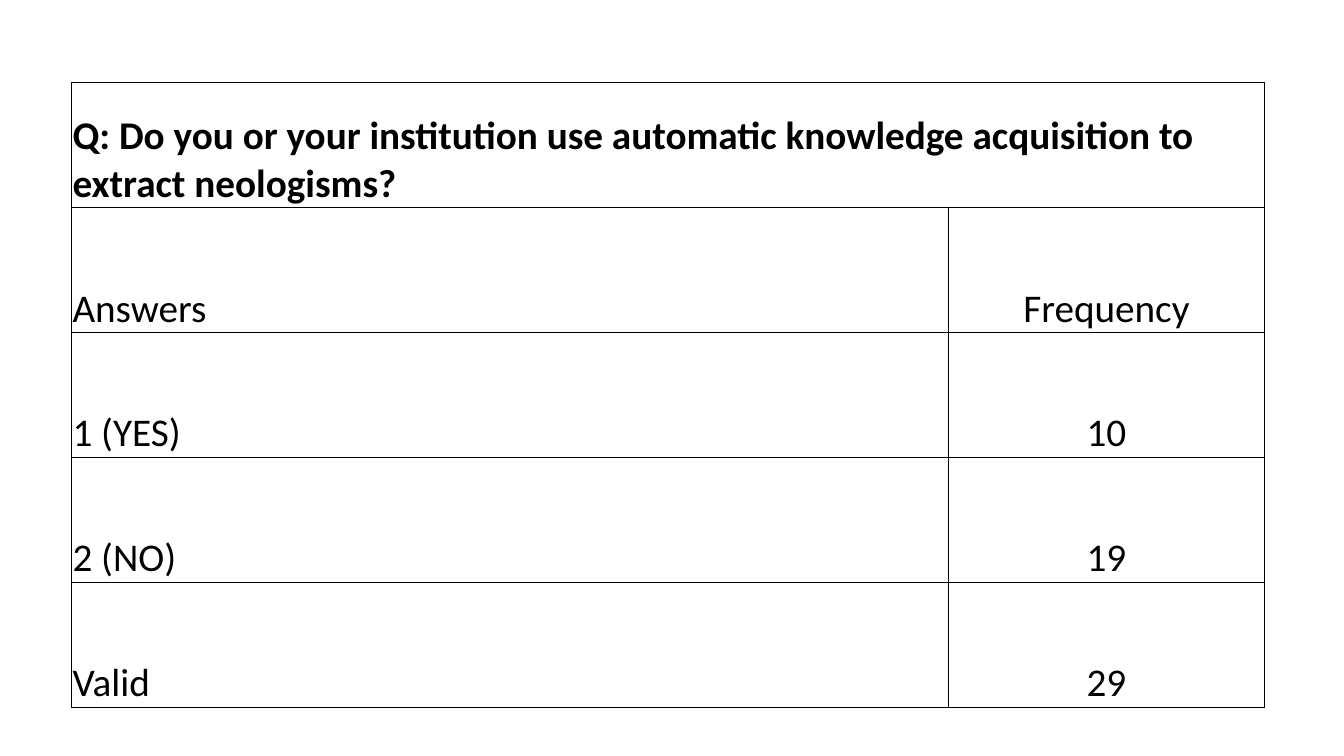
from lxml import etree
from pptx import Presentation
from pptx.dml.color import RGBColor
from pptx.enum.text import MSO_ANCHOR, PP_ALIGN
from pptx.oxml.ns import qn
from pptx.util import Inches, Pt

BOTTOM = MSO_ANCHOR.BOTTOM
LEFT, CENTER = PP_ALIGN.LEFT, PP_ALIGN.CENTER
BLANK_LAYOUT = 6

COLORS = {"text": "000000", "border": "000000", "cell": "FFFFFF"}
FONT = "Calibri"

QUESTION = ("Q: Do you or your institution use automatic knowledge "
            "acquisition to extract neologisms?")
ANSWERS = [
    ("Answers", "Frequency"),
    ("1 (YES)", "10"),
    ("2 (NO)", "19"),
    ("Valid", "29"),
]
COLUMN_WIDTHS = (8.7, 3.13)
ROW_HEIGHT = 1.24


def write_text(frame, text, size=28, bold=False, align=LEFT, color="text"):
    """Put one formatted paragraph into a text frame."""
    para = frame.paragraphs[0]
    para.alignment = align
    span = para.add_run()
    span.text = text
    span.font.name = FONT
    span.font.size = Pt(size)
    span.font.bold = bold
    span.font.color.rgb = RGBColor.from_string(COLORS[color])


def set_borders(cell, color="border", width=0.5):
    """Draw a solid line on all four sides of a cell."""
    properties = cell._tc.get_or_add_tcPr()
    for index, side in enumerate(("lnL", "lnR", "lnT", "lnB")):
        line = etree.Element(qn(f"a:{side}"), w=str(Pt(width)))
        fill = etree.SubElement(line, qn("a:solidFill"))
        etree.SubElement(fill, qn("a:srgbClr"), val=COLORS[color])
        # Borders must come before the fill in the cell properties
        properties.insert(index, line)


def format_cell(cell):
    cell.fill.solid()
    cell.fill.fore_color.rgb = RGBColor.from_string(COLORS["cell"])
    cell.vertical_anchor = BOTTOM
    cell.margin_left = cell.margin_right = cell.margin_top = Inches(0.01)
    cell.margin_bottom = 0
    set_borders(cell)


def add_survey_table(page, left, top):
    row_count = len(ANSWERS) + 1
    table = page.shapes.add_table(
        row_count, len(COLUMN_WIDTHS), Inches(left), Inches(top),
        Inches(sum(COLUMN_WIDTHS)), Inches(ROW_HEIGHT * row_count)).table
    table.first_row = False
    table.horz_banding = False
    for column, width in zip(table.columns, COLUMN_WIDTHS):
        column.width = Inches(width)
    for row in table.rows:
        row.height = Inches(ROW_HEIGHT)
    for cell in table.iter_cells():
        format_cell(cell)

    # Question across the full width
    question = table.cell(0, 0)
    question.merge(table.cell(0, 1))
    write_text(question.text_frame, QUESTION, bold=True)

    # Answers with their frequencies
    for row, (answer, frequency) in enumerate(ANSWERS, start=1):
        write_text(table.cell(row, 0).text_frame, answer)
        write_text(table.cell(row, 1).text_frame, frequency, align=CENTER)


def main():
    deck = Presentation()
    deck.slide_width = Inches(13.33)
    deck.slide_height = Inches(7.5)
    page = deck.slides.add_slide(deck.slide_layouts[BLANK_LAYOUT])
    add_survey_table(page, left=0.71, top=0.82)
    deck.save("out.pptx")


if __name__ == "__main__":
    main()
